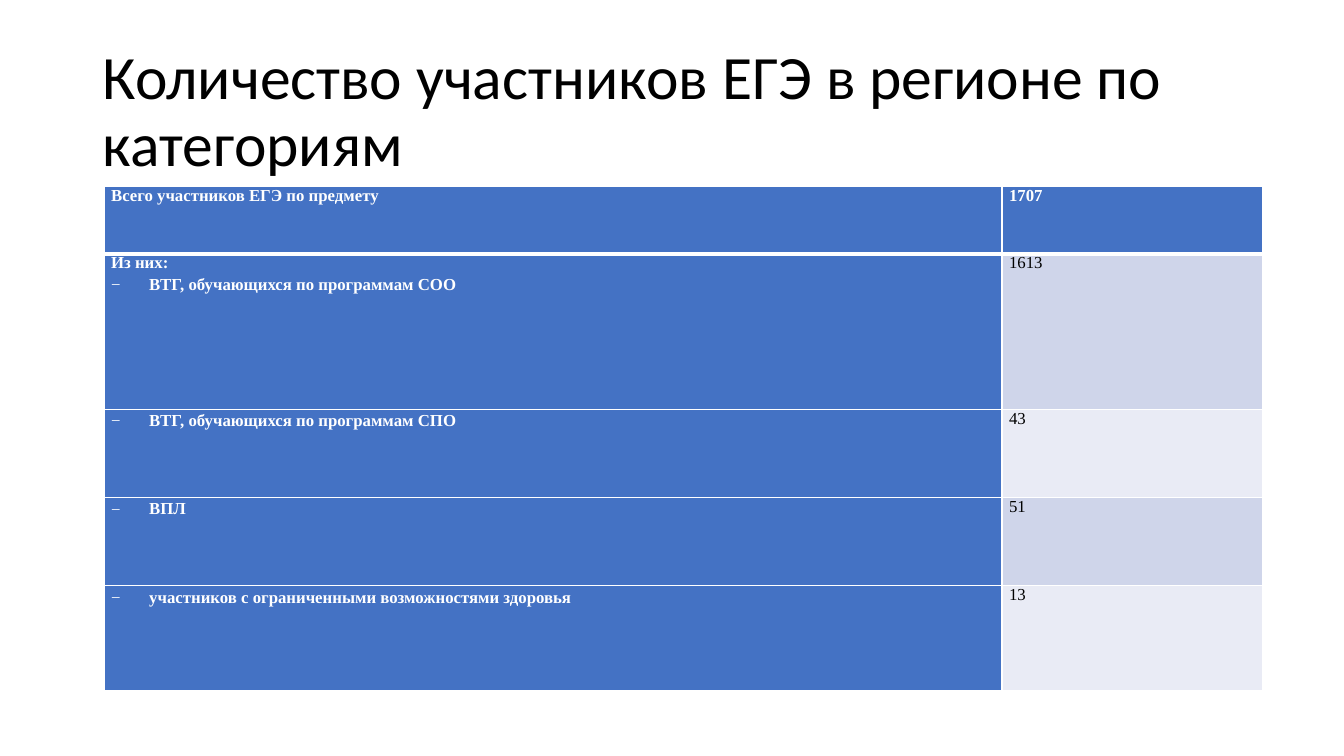
from lxml import etree
from pptx import Presentation
from pptx.dml.color import RGBColor
from pptx.enum import text
from pptx.oxml import ns
from pptx.util import Cm, Pt

TITLE = "Количество участников ЕГЭ в регионе по категориям"
# Each row: lead line, bulleted line, count, height in cm
ROWS = [
    ("Всего участников ЕГЭ по предмету", None, "1707", 1.7),
    ("Из них:", "ВТГ, обучающихся по программам СОО", "1613", 3.91),
    (None, "ВТГ, обучающихся по программам СПО", "43", 2.22),
    (None, "ВПЛ", "51", 2.22),
    (None, "участников с ограниченными возможностями здоровья", "13", 2.64),
]
COLS = [22.63, 6.58]
LEFT, TOP = 2.62, 4.7
INDENT = Cm(0.96)

WHITE = RGBColor(0xFF, 0xFF, 0xFF)
BLACK = RGBColor(0, 0, 0)
BLUE = RGBColor(0x44, 0x72, 0xC4)
BANDS = [RGBColor(0xE9, 0xEB, 0xF5), RGBColor(0xCF, 0xD5, 0xEA)]


def write(par, words, size=12, font="Times New Roman", color=WHITE, bold=True,
          align=text.PP_ALIGN.JUSTIFY, space=None, bullet=None):
    run = par.add_run()
    run.text = words
    run.font.size, run.font.name, run.font.bold = Pt(size), font, bold
    run.font.color.rgb = color
    par.alignment, par.line_spacing = align, space
    if bullet:
        props = par._p.get_or_add_pPr()
        props.set("marL", str(INDENT))
        props.set("indent", str(-INDENT))
        etree.SubElement(props, ns.qn("a:buFont"), typeface=font)
        etree.SubElement(props, ns.qn("a:buChar"), char=bullet)


def edge(cell, **widths):
    """Draw white cell borders, with widths in points by side."""
    props = cell._tc.get_or_add_tcPr()
    for place, (side, width) in enumerate(widths.items()):
        line = etree.Element(ns.qn("a:ln" + side), w=str(Pt(width)))
        fill = etree.SubElement(line, ns.qn("a:solidFill"))
        etree.SubElement(fill, ns.qn("a:srgbClr"), val=str(WHITE))
        props.insert(place, line)


def style(cell, fill):
    cell.fill.solid()
    cell.fill.fore_color.rgb = fill
    cell.margin_left = cell.margin_right = Cm(0.18)
    cell.margin_top = cell.margin_bottom = 0


def add_title(slide):
    title = slide.shapes.title
    title.left, title.top, title.width, title.height = (
        Cm(x) for x in (2.33, 1.01, 29.21, 3.68))
    frame = title.text_frame
    frame.word_wrap = True
    frame.auto_size = text.MSO_AUTO_SIZE.NONE
    frame.vertical_anchor = text.MSO_ANCHOR.MIDDLE
    write(frame.paragraphs[0], TITLE, size=44, font="Calibri", color=BLACK,
          bold=False, align=text.PP_ALIGN.LEFT, space=0.9)


def add_counts(slide):
    high = sum(row[-1] for row in ROWS)
    table = slide.shapes.add_table(len(ROWS), len(COLS), Cm(LEFT), Cm(TOP),
                                   Cm(sum(COLS)), Cm(high)).table
    table.first_col = True
    for col, width in zip(table.columns, COLS):
        col.width = Cm(width)
    for i, (lead, item, count, tall) in enumerate(ROWS):
        table.rows[i].height = Cm(tall)
        head = i == 0
        label, value = table.cell(i, 0), table.cell(i, 1)
        style(label, BLUE)
        style(value, BLUE if head else BANDS[i % 2])
        for cell in (label, value):
            edge(cell, L=1, R=1, T=3 if i == 1 else 1, B=3 if head else 1)
        frame = label.text_frame
        par = frame.paragraphs[0]
        if lead:
            write(par, lead)
        if item:
            par = frame.add_paragraph() if lead else par
            write(par, item, space=1.15, bullet="−")
        write(value.text_frame.paragraphs[0], count, bold=head,
              color=WHITE if head else BLACK)


def main():
    deck = Presentation()
    deck.slide_width, deck.slide_height = Cm(33.87), Cm(19.05)
    slide = deck.slides.add_slide(deck.slide_layouts[5])
    add_title(slide)
    add_counts(slide)
    deck.save("out.pptx")


if __name__ == "__main__":
    main()
